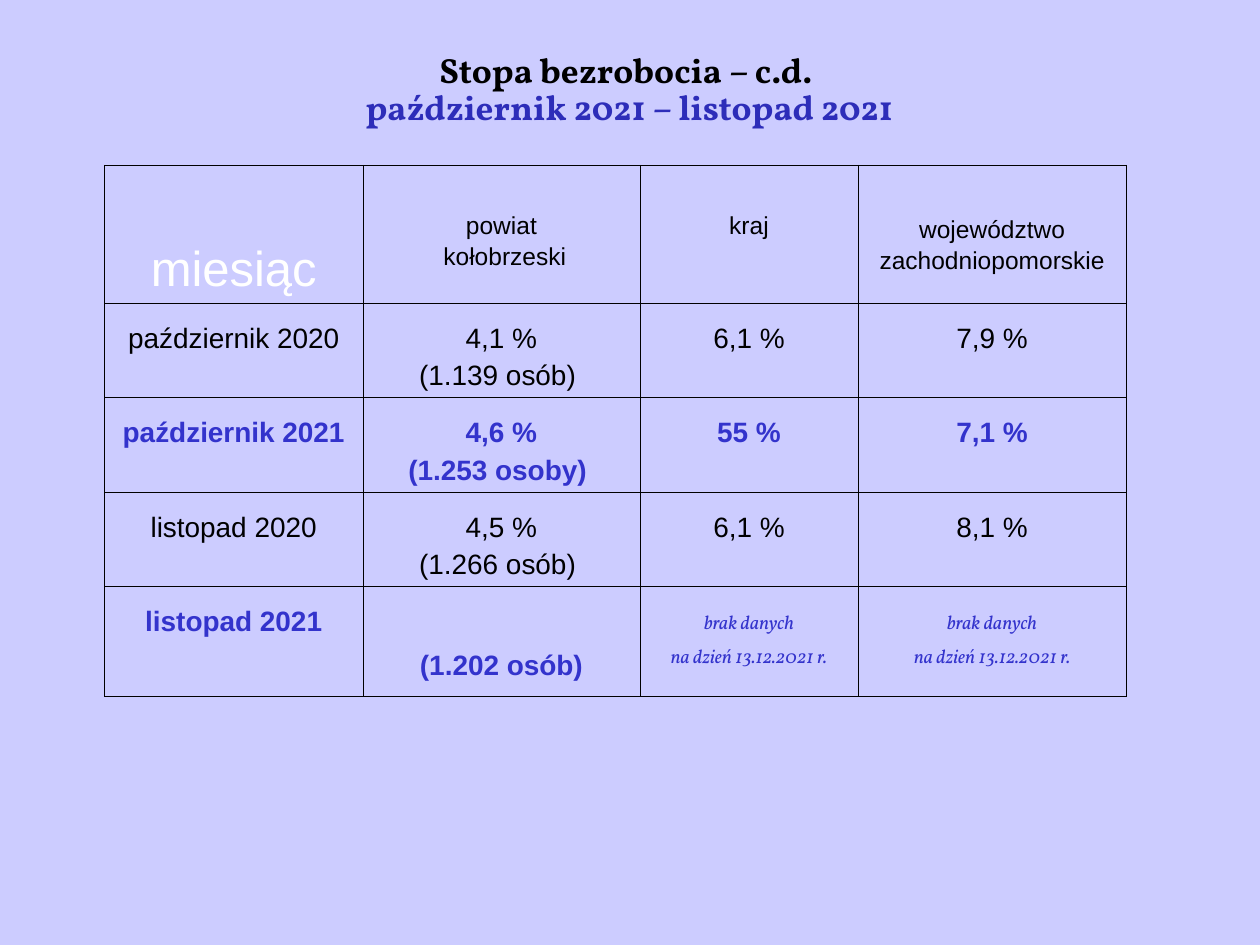
from lxml import etree
from pptx import Presentation
from pptx.dml.color import RGBColor
from pptx.enum.text import MSO_ANCHOR, PP_ALIGN
from pptx.oxml.ns import qn
from pptx.util import Inches, Pt

CENTER = PP_ALIGN.CENTER
MIDDLE = MSO_ANCHOR.MIDDLE
TOP = MSO_ANCHOR.TOP

LAVENDER = RGBColor(0xCC, 0xCC, 0xFF)
BLACK = RGBColor(0, 0, 0)
WHITE = RGBColor(0xFF, 0xFF, 0xFF)
BLUE = RGBColor(0x33, 0x33, 0xCC)
TITLE_BLUE = RGBColor(0x2D, 0x2D, 0xB9)

BODY_FONT = "Arial"
SERIF_FONT = "Vollkorn"
OUTER_LINE, INNER_LINE = Pt(0.23), Pt(0.11)

COLUMN_WIDTHS = [2.05, 2.2, 1.73, 2.13]
ROW_HEIGHTS = [1.08, 0.75, 0.75, 0.75, 0.87]

# Each header: lines, top margin in inches, format
HEADERS = [
    (["miesiąc"], 0.61, dict(size=28, color=WHITE, spacing=1.0, before=0)),
    (["powiat", " kołobrzeski"], 0.41, dict(size=14, before=5)),
    (["kraj"], 0.41, dict(size=14, before=5)),
    (["województwo", "zachodniopomorskie"], 0.44, dict(size=14, before=5)),
]
NO_DATA = ["brak danych", "na dzień 13.12.2021 r."]
MONTHS = [
    [["październik 2020"], ["4,1 %", "(1.139 osób) "], ["6,1 %"], ["7,9 %"]],
    [["październik 2021"], ["4,6 %", "(1.253 osoby) "], ["55 %"], ["7,1 %"]],
    [["listopad 2020"], ["4,5 %", "(1.266 osób) "], ["6,1 %"], ["8,1 %"]],
    [["listopad 2021"], ["(1.202 osób)"], NO_DATA, NO_DATA],
]


def add_span(para, text, size=16, color=BLACK, font=BODY_FONT, bold=False, italic=False):
    span = para.add_run()
    span.text = text
    span.font.size = Pt(size)
    span.font.name = font
    span.font.bold = bold
    span.font.italic = italic
    span.font.color.rgb = color


def fill_cell(cell, lines, top=0.2, spacing=0.81, before=7, **text_format):
    cell.fill.background()
    cell.vertical_anchor = TOP
    cell.margin_left = cell.margin_right = Inches(0.1)
    cell.margin_top, cell.margin_bottom = Inches(top), Inches(0.05)
    frame = cell.text_frame
    for index, line in enumerate(lines):
        para = frame.add_paragraph() if index else frame.paragraphs[0]
        para.alignment = CENTER
        para.line_spacing = spacing
        para.space_before = Pt(before)
        add_span(para, line, **text_format)


def set_borders(cell, **widths):
    """Draw black borders; widths maps the side letters L, R, T, B to lengths."""
    properties = cell._tc.get_or_add_tcPr()
    for position, side in enumerate("LRTB"):
        line = etree.Element(qn(f"a:ln{side}"), w=str(int(widths[side])))
        fill = etree.SubElement(line, qn("a:solidFill"))
        etree.SubElement(fill, qn("a:srgbClr"), val=str(BLACK))
        properties.insert(position, line)


def place_title(title, left, top, width, height):
    title.left, title.top = Inches(left), Inches(top)
    title.width, title.height = Inches(width), Inches(height)
    frame = title.text_frame
    frame.vertical_anchor = MIDDLE
    para = frame.paragraphs[0]
    para.alignment = CENTER
    para.line_spacing = 0.88
    add_span(para, "Stopa bezrobocia – c.d. ", size=20, font=SERIF_FONT, bold=True)
    para.add_line_break()
    add_span(para, "październik 2021 – listopad 2021",
             size=20, font=SERIF_FONT, bold=True, color=TITLE_BLUE)


def month_format(row, column, lines):
    """Months of 2021 are bold and blue; missing values are small serif italics."""
    if lines is NO_DATA:
        return dict(size=11, font=SERIF_FONT, italic=True, color=BLUE)
    if row % 2:
        is_lone_count = column == 1 and len(lines) == 1
        return dict(bold=True, color=BLUE, top=0.55 if is_lone_count else 0.2)
    return {}


def add_rate_table(page, left, top, width, height):
    row_count, column_count = len(ROW_HEIGHTS), len(COLUMN_WIDTHS)
    table = page.shapes.add_table(row_count, column_count, Inches(left), Inches(top),
                                  Inches(width), Inches(height)).table
    table.first_row = table.horz_banding = False
    for column, column_width in zip(table.columns, COLUMN_WIDTHS):
        column.width = Inches(column_width)
    for row, row_height in zip(table.rows, ROW_HEIGHTS):
        row.height = Inches(row_height)

    for column, (lines, margin, text_format) in enumerate(HEADERS):
        fill_cell(table.cell(0, column), lines, top=margin, **text_format)
    for row, month in enumerate(MONTHS):
        for column, lines in enumerate(month):
            fill_cell(table.cell(row + 1, column), lines, **month_format(row, column, lines))

    for row in range(row_count):
        for column in range(column_count):
            set_borders(table.cell(row, column),
                        L=OUTER_LINE if column == 0 else INNER_LINE,
                        R=OUTER_LINE if column == column_count - 1 else INNER_LINE,
                        T=OUTER_LINE if row == 0 else INNER_LINE,
                        B=INNER_LINE)


def main():
    deck = Presentation()
    deck.slide_width, deck.slide_height = Inches(10), Inches(7.5)
    page = deck.slides.add_slide(deck.slide_layouts[5])
    page.background.fill.solid()
    page.background.fill.fore_color.rgb = LAVENDER
    place_title(page.shapes.title, 0.5, 0.14, 8.99, 1.17)
    add_rate_table(page, 0.83, 1.31, sum(COLUMN_WIDTHS), sum(ROW_HEIGHTS))
    deck.save("out.pptx")


if __name__ == "__main__":
    main()
